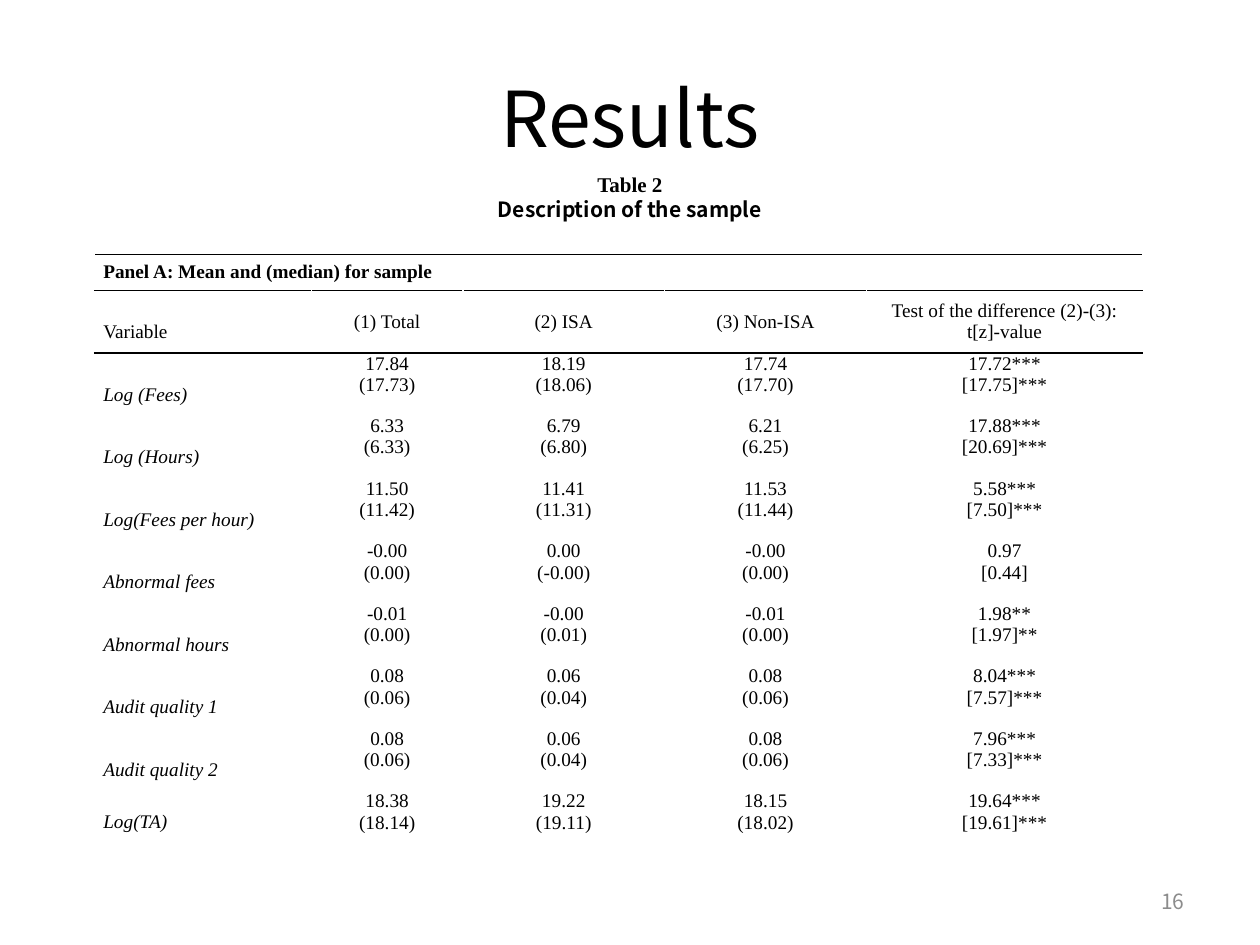
from lxml import etree
from pptx import Presentation
from pptx.dml.color import RGBColor
from pptx.enum.text import MSO_ANCHOR, PP_ALIGN
from pptx.oxml.ns import qn
from pptx.util import Inches, Pt

BLACK = RGBColor(0x00, 0x00, 0x00)
GREY = RGBColor(0x8C, 0x8C, 0x8C)
SANS, SERIF = "Noto Sans CJK KR", "Times New Roman"
LEFT, CENTER, RIGHT, JUSTIFY = PP_ALIGN.LEFT, PP_ALIGN.CENTER, PP_ALIGN.RIGHT, PP_ALIGN.JUSTIFY
TOP, MIDDLE = MSO_ANCHOR.TOP, MSO_ANCHOR.MIDDLE

WIDTH, HEIGHT = Inches(10), Inches(7.5)
COLUMN_SHARES = [1.72, 1.2, 1.6, 1.6, 2.19]
PANEL_ROW_SHARE = 0.06
PANEL_TITLE = "Panel A: Mean and (median) for sample"
HEADINGS = ["Variable", "(1) Total", "(2) ISA", "(3) Non-ISA",
            "Test of the difference (2)-(3): t[z]-value"]
RESULTS = [
    ("Log (Fees)", "17.84 (17.73)", "18.19 (18.06)", "17.74 (17.70)", "17.72*** [17.75]***"),
    ("Log (Hours)", "6.33 (6.33)", "6.79 (6.80)", "6.21 (6.25)", "17.88*** [20.69]***"),
    ("Log(Fees per hour)", "11.50 (11.42)", "11.41 (11.31)", "11.53 (11.44)", "5.58*** [7.50]***"),
    ("Abnormal fees", "-0.00 (0.00)", "0.00 (-0.00)", "-0.00 (0.00)", "0.97 [0.44]"),
    ("Abnormal hours", "-0.01 (0.00)", "-0.00 (0.01)", "-0.01 (0.00)", "1.98** [1.97]**"),
    ("Audit quality 1", "0.08 (0.06)", "0.06 (0.04)", "0.08 (0.06)", "8.04*** [7.57]***"),
    ("Audit quality 2", "0.08 (0.06)", "0.06 (0.04)", "0.08 (0.06)", "7.96*** [7.33]***"),
    ("Log(TA)", "18.38 (18.14)", "19.22 (19.11)", "18.15 (18.02)", "19.64*** [19.61]***"),
]


def share_box(left, top, width, height):
    return (int(WIDTH * left / 100), int(HEIGHT * top / 100),
            int(WIDTH * width / 100), int(HEIGHT * height / 100))


def write_lines(frame, lines, align, spacing=None, color=BLACK, **font_format):
    for index, line in enumerate(lines):
        para = frame.paragraphs[0] if index == 0 else frame.add_paragraph()
        para.alignment = align
        if spacing:
            para.line_spacing = spacing
        span = para.add_run()
        span.text = line
        span.font.color.rgb = color
        for name, value in font_format.items():
            setattr(span.font, name, value)


def add_title(page, box):
    title = page.shapes.title
    title.left, title.top, title.width, title.height = box
    title.text_frame.vertical_anchor = MIDDLE
    write_lines(title.text_frame, ["Results"], CENTER, size=Pt(44), name=SANS)


def add_text_region(page, box):
    frame = page.shapes.add_textbox(*box).text_frame
    frame.word_wrap = True
    frame.vertical_anchor = MIDDLE
    return frame


def add_caption(page, box):
    frame = add_text_region(page, box)
    write_lines(frame, ["Table 2", "Description of the sample"], CENTER,
                size=Pt(12), name=SERIF, bold=True)
    frame.paragraphs[1].runs[0].font.name = SANS


def add_page_number(page, box):
    write_lines(add_text_region(page, box), ["16"], RIGHT, color=GREY, size=Pt(12), name=SANS)


def rule_cell(cell, sides):
    properties = cell._tc.get_or_add_tcPr()
    for side in sides:
        line = etree.SubElement(properties, qn("a:ln" + side), w=str(Pt(1)))
        fill = etree.SubElement(line, qn("a:solidFill"))
        etree.SubElement(fill, qn("a:srgbClr"), val=str(BLACK))


def fill_cell(cell, lines, align, anchor, sides, **text_format):
    cell.vertical_anchor = anchor
    cell.margin_left = cell.margin_right = Inches(0.07)
    cell.margin_top = cell.margin_bottom = 0
    rule_cell(cell, sides)
    cell.fill.background()
    write_lines(cell.text_frame, lines, align, size=Pt(11), name=SERIF, **text_format)


def add_results_table(page, box):
    width, height = box[2:]
    table = page.shapes.add_table(len(RESULTS) + 2, len(HEADINGS), *box).table
    table.first_row = table.horz_banding = False
    for column, share in zip(table.columns, COLUMN_SHARES):
        column.width = int(width * share / sum(COLUMN_SHARES))
    panel_height = int(height * PANEL_ROW_SHARE)
    for index, row in enumerate(table.rows):
        row.height = (height - panel_height) // (len(RESULTS) + 1) if index else panel_height

    table.cell(0, 0).merge(table.cell(0, len(HEADINGS) - 1))
    for column, heading in enumerate(HEADINGS):
        panel_lines = [] if column else [PANEL_TITLE]
        fill_cell(table.cell(0, column), panel_lines, JUSTIFY, MIDDLE, "TB", bold=True)
        align, spacing = (CENTER, None) if column else (LEFT, 2.0)
        fill_cell(table.cell(1, column), [heading], align, MIDDLE, "TB", spacing=spacing)

    for row, (label, *values) in enumerate(RESULTS, start=2):
        sides = "T" if row == 2 else ""
        is_last = row == len(RESULTS) + 1
        align, spacing = (JUSTIFY, None) if is_last else (LEFT, 2.0)
        fill_cell(table.cell(row, 0), [label], align, MIDDLE, sides, spacing=spacing, italic=True)
        for column, value in enumerate(values, start=1):
            fill_cell(table.cell(row, column), value.split(), CENTER, TOP, sides)


def main():
    deck = Presentation()
    deck.slide_width, deck.slide_height = WIDTH, HEIGHT
    page = deck.slides.add_slide(deck.slide_layouts[5])
    add_title(page, share_box(5, 4, 90, 16.67))
    add_page_number(page, share_box(71.67, 92.67, 23.33, 5.33))
    add_caption(page, share_box(0, 17.5, 100, 6.67))
    add_results_table(page, share_box(7.5, 26.93, 83.2, 63.33))
    deck.save("out.pptx")


if __name__ == "__main__":
    main()
